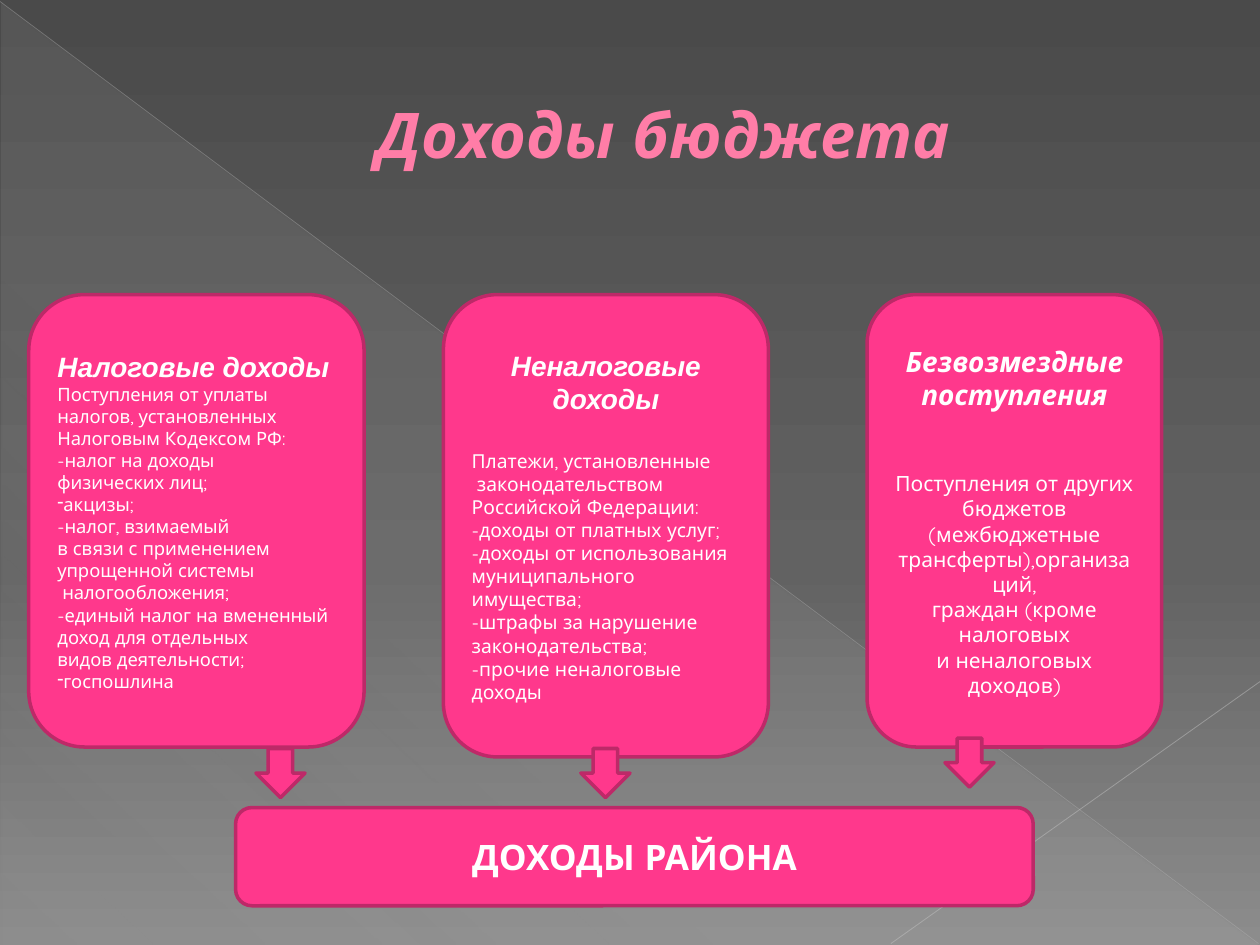
from lxml import etree
from pptx import Presentation
from pptx.dml.color import RGBColor
from pptx.enum.shapes import MSO_CONNECTOR, MSO_SHAPE
from pptx.enum.text import MSO_ANCHOR, PP_ALIGN
from pptx.oxml.ns import qn
from pptx.util import Cm, Pt

PINK = RGBColor(0xFF, 0x38, 0x8C)
DARK_PINK = RGBColor(0xBD, 0x29, 0x68)
TITLE_PINK = RGBColor(0xFF, 0x7D, 0xA7)
TITLE_EDGE = RGBColor(0xB1, 0x27, 0x61)
WHITE = RGBColor(0xFF, 0xFF, 0xFF)
PALE = RGBColor(0xD2, 0xD2, 0xD2)
RAY_GREY = RGBColor(0xBF, 0xBF, 0xBF)
RAY_LIGHT = RGBColor(0xC6, 0xC6, 0xC6)
BACKGROUND = [(0, RGBColor(0x4A, 0x4A, 0x4A), 100),
              (60, RGBColor(0x62, 0x62, 0x62), 100),
              (100, RGBColor(0x8C, 0x8C, 0x8C), 100)]
SHEEN = [(0, PALE, 10), (70, PALE, 8), (100, PALE, 1)]

FONT = "Quicksand"
CARD_TOP = 5.94
BULLETED = {"акцизы;", "госпошлина"}

TAX = ["Поступления от уплаты", "налогов, установленных",
       "Налоговым Кодексом РФ:", "-налог на доходы", "физических лиц;",
       "акцизы;", "-налог, взимаемый", "в связи с применением",
       "упрощенной системы", " налогообложения;",
       "-единый налог на вмененный", "доход для отдельных",
       "видов деятельности;", "госпошлина"]
NON_TAX = ["Платежи, установленные", " законодательством",
           "Российской Федерации:", "-доходы от платных услуг;",
           "-доходы от использования", "муниципального имущества;",
           "-штрафы за нарушение", "законодательства;",
           "-прочие неналоговые доходы"]
GRANTS = ["Поступления от других", "бюджетов (межбюджетные",
          "трансферты),организаций,", "граждан (кроме налоговых",
          "и неналоговых доходов)"]

# left, width, height, heading, heading font, heading alignment,
# lines, text size, text alignment, gap under the heading
CARDS = [
    (0.58, 6.76, 9.12, "Налоговые доходы", "Arial", PP_ALIGN.LEFT,
     TAX, 10.5, PP_ALIGN.LEFT, 0),
    (8.94, 6.55, 9.32, "Неналоговые доходы", "Arial", PP_ALIGN.CENTER,
     NON_TAX, 11, PP_ALIGN.LEFT, 19),
    (17.48, 5.94, 9.12, "Безвозмездные поступления", FONT, PP_ALIGN.CENTER,
     GRANTS, 12, PP_ALIGN.CENTER, 34),
]
ARROWS = [(5.16, 15.09), (11.71, 15.09), (19.05, 14.88)]


def set_alpha(color, percent):
    etree.SubElement(color, qn("a:alpha"), val=str(percent * 1000))


def set_gradient(fill, stops, angle):
    """Fill with (position, colour, opacity) stops in percent, angle clockwise."""
    fill.gradient()
    grad = fill._fill._gradFill
    for child in list(grad):
        grad.remove(child)
    gs_list = etree.SubElement(grad, qn("a:gsLst"))
    for position, color, opacity in stops:
        gs = etree.SubElement(gs_list, qn("a:gs"), pos=str(position * 1000))
        clr = etree.SubElement(gs, qn("a:srgbClr"), val=str(color))
        if opacity < 100:
            set_alpha(clr, opacity)
    etree.SubElement(grad, qn("a:lin"), ang=str(angle * 60000), scaled="0")


def add_ray(s, x1, y1, x2, y2, color, width, opacity):
    line = s.shapes.add_connector(MSO_CONNECTOR.STRAIGHT,
                                  Cm(x1), Cm(y1), Cm(x2), Cm(y2))
    line.line.color.rgb = color
    line.line.width = Pt(width)
    set_alpha(line.line._ln.find(".//" + qn("a:srgbClr")), opacity)
    etree.SubElement(line._element.spPr, qn("a:effectLst"))


def add_backdrop(s):
    set_gradient(s.background.fill, BACKGROUND, 90)
    sp = s.shapes.add_shape(MSO_SHAPE.RIGHT_TRIANGLE,
                            Cm(0.03), Cm(0.05), Cm(25.35), Cm(19))
    sp.shadow.inherit = False
    sp.line.fill.background()
    set_gradient(sp.fill, SHEEN, 133)
    add_ray(s, 0, 0.03, 25.37, 19.02, RAY_GREY, 0.39, 35)
    add_ray(s, 25.4, 13.74, 17.96, 19.02, RAY_LIGHT, 0.47, 45)


def add_pink_shape(s, kind, x, y, w, h):
    sp = s.shapes.add_shape(kind, Cm(x), Cm(y), Cm(w), Cm(h))
    sp.shadow.inherit = False
    sp.fill.solid()
    sp.fill.fore_color.rgb = PINK
    sp.line.color.rgb = DARK_PINK
    sp.line.width = Pt(2)
    return sp


def write(p, text, size, align, font=FONT, color=WHITE, bold=False, italic=False):
    p.alignment = align
    f = p.font
    f.name, f.size, f.bold, f.italic = font, Pt(size), bold, italic
    f.color.rgb = color
    r = p.add_run()
    r.text = text
    return r


def add_dash_bullet(p):
    bullet = etree.Element(qn("a:buChar"), char="-")
    p._p.get_or_add_pPr().insert(0, bullet)


def add_title(s, text):
    tf = s.shapes.add_textbox(Cm(1.27), Cm(0.74), Cm(22.86), Cm(3.89)).text_frame
    tf.word_wrap = True
    tf.vertical_anchor = MSO_ANCHOR.MIDDLE
    p = tf.paragraphs[0]
    r = write(p, text, 36, PP_ALIGN.CENTER, color=TITLE_PINK, bold=True, italic=True)
    p._p.get_or_add_pPr().set("marL", str(Cm(1.35)))
    outline = etree.Element(qn("a:ln"), w=str(Pt(0.5)))
    solid = etree.SubElement(outline, qn("a:solidFill"))
    etree.SubElement(solid, qn("a:srgbClr"), val=str(TITLE_EDGE))
    r._r.get_or_add_rPr().insert(0, outline)


def add_card(s, x, w, h, heading, heading_font, heading_align,
             lines, size, align, gap):
    sp = add_pink_shape(s, MSO_SHAPE.ROUNDED_RECTANGLE, x, CARD_TOP, w, h)
    tf = sp.text_frame
    tf.word_wrap = True
    tf.vertical_anchor = MSO_ANCHOR.MIDDLE
    p = tf.paragraphs[0]
    write(p, heading, 16, heading_align, heading_font, bold=True, italic=True)
    p.space_after = Pt(gap)
    for line in lines:
        p = tf.add_paragraph()
        write(p, line, size, align)
        if line in BULLETED:
            add_dash_bullet(p)


def add_total(s, text):
    sp = add_pink_shape(s, MSO_SHAPE.ROUNDED_RECTANGLE, 4.75, 16.28, 16.08, 1.98)
    tf = sp.text_frame
    tf.vertical_anchor = MSO_ANCHOR.MIDDLE
    write(tf.paragraphs[0], text, 20, PP_ALIGN.CENTER, bold=True)


def main():
    prs = Presentation()
    prs.slide_width, prs.slide_height = Cm(25.4), Cm(19.05)
    s = prs.slides.add_slide(prs.slide_layouts[6])
    add_backdrop(s)
    add_title(s, "Доходы бюджета")
    for card in CARDS:
        add_card(s, *card)
    add_total(s, "ДОХОДЫ РАЙОНА")
    for x, y in ARROWS:
        add_pink_shape(s, MSO_SHAPE.DOWN_ARROW, x, y, 0.99, 0.99)
    prs.save("out.pptx")


if __name__ == "__main__":
    main()
